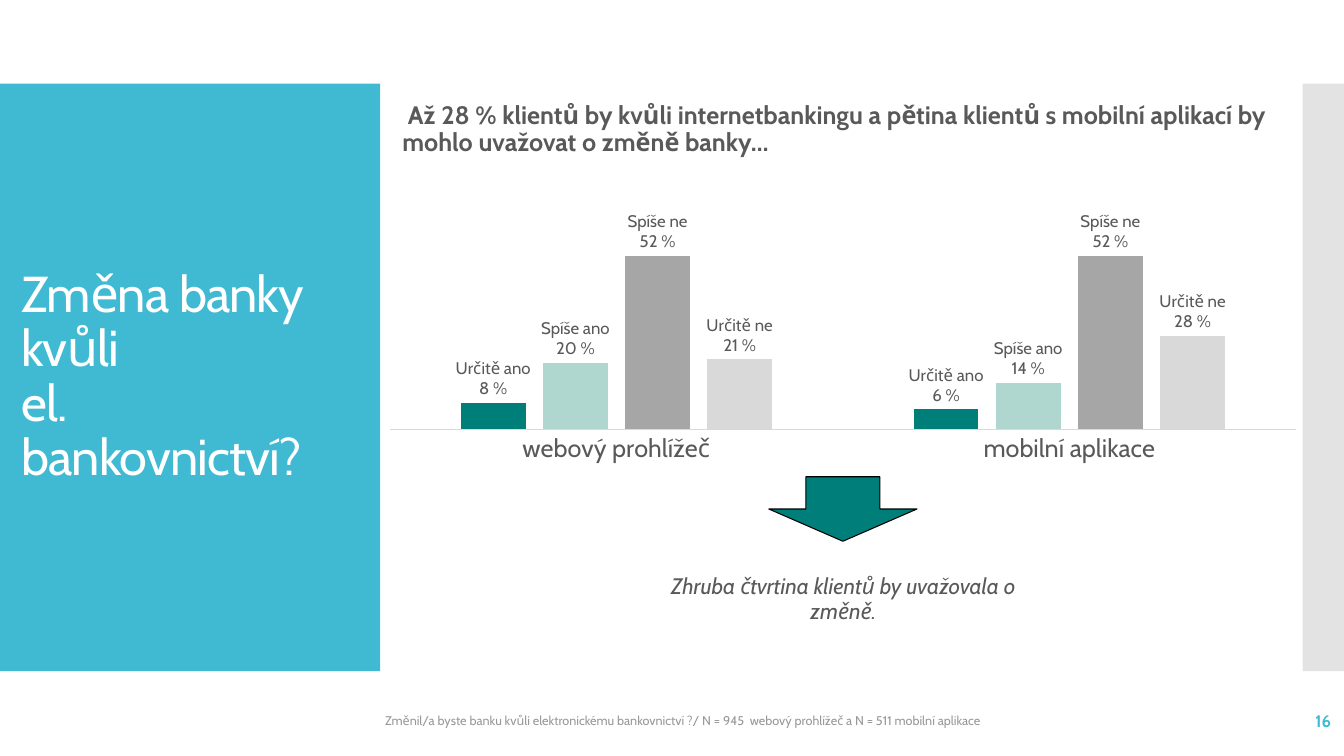
from dataclasses import dataclass

from lxml.etree import SubElement
from pptx import Presentation
from pptx.chart.data import CategoryChartData
from pptx.dml.color import RGBColor
from pptx.enum.chart import XL_CHART_TYPE, XL_LABEL_POSITION, XL_TICK_LABEL_POSITION, XL_TICK_MARK
from pptx.enum.shapes import MSO_SHAPE
from pptx.enum.text import MSO_ANCHOR, MSO_AUTO_SIZE, PP_ALIGN
from pptx.oxml import parse_xml
from pptx.oxml.ns import nsdecls, qn
from pptx.util import Inches, Pt


@dataclass(frozen=True)
class Theme:
    font: str = "Cabin"
    accent: str = "40BAD2"
    side: str = "C8C8C8"
    white: str = "FFFFFF"
    text: str = "595959"
    muted: str = "989898"
    teal: str = "007E79"
    mint: str = "AFD7CF"
    grey: str = "A6A6A6"
    light: str = "D9D9D9"
    outline: str = "000000"
    title_size: float = 36
    heading_size: float = 18
    note_size: float = 16
    label_size: float = 12
    footer_size: float = 9


T = Theme()
SHARE_FORMAT = "###0%"
ANSWERS = [
    ("Určitě ano", (0.08, 0.06), T.teal),
    ("Spíše ano", (0.20, 0.14), T.mint),
    ("Spíše ne", (0.52, 0.52), T.grey),
    ("Určitě ne", (0.21, 0.28), T.light),
]


def rgb(value):
    return RGBColor.from_string(value)


def inches(box):
    return [Inches(v) for v in box]


def set_font(font, size, color, bold=False, italic=False):
    font.name, font.size = T.font, Pt(size)
    font.bold, font.italic = bold, italic
    font.color.rgb = rgb(color)


def write(sp, box, text, size, color, align=PP_ALIGN.LEFT, anchor=MSO_ANCHOR.MIDDLE,
          spacing=1.0, bold=False, italic=False):
    sp.left, sp.top, sp.width, sp.height = inches(box)
    tf = sp.text_frame
    tf.text = text
    tf.word_wrap, tf.auto_size = True, MSO_AUTO_SIZE.NONE
    tf.vertical_anchor = anchor
    p = tf.paragraphs[0]
    p.alignment, p.line_spacing, p.space_before = align, spacing, Pt(0)
    set_font(p.font, size, color, bold, italic)
    return p


def add_filled(s, kind, box, color):
    sp = s.shapes.add_shape(kind, *inches(box))
    sp.shadow.inherit = False
    sp.fill.solid()
    sp.fill.fore_color.rgb = rgb(color)
    sp.line.fill.background()
    return sp


def add_panel(s, box, color, alpha=None):
    sp = add_filled(s, MSO_SHAPE.RECTANGLE, box, color)
    if alpha is not None:
        clr = sp._element.spPr.find(".//" + qn("a:srgbClr"))
        SubElement(clr, qn("a:alpha")).set("val", str(alpha * 1000))
    # Panels lie behind the placeholders
    s.shapes._spTree.insert(2, sp._element)


def add_title_panel(s, box):
    x, y, w, h = box
    add_panel(s, box, T.accent)
    p = write(s.shapes.title, (x + 0.11, y + 0.4, w - 0.26, h - 0.8),
              "Změna banky kvůli \vel. bankovnictví?", T.title_size, T.white, spacing=0.9)
    p.font._rPr.set("spc", "-60")


def add_bank_chart(s, box):
    data = CategoryChartData(number_format=SHARE_FORMAT)
    data.categories = ["webový prohlížeč", "mobilní aplikace"]
    for name, values, _ in ANSWERS:
        data.add_series(name, values)
    chart = s.shapes.add_chart(XL_CHART_TYPE.COLUMN_CLUSTERED, *inches(box), data).chart
    chart.has_legend = chart.has_title = False
    set_font(chart.font, T.label_size, T.text)

    # Axes
    shares, cats = chart.value_axis, chart.category_axis
    shares.minimum_scale, shares.maximum_scale = 0, 0.6
    shares.has_major_gridlines = shares.visible = False
    shares.tick_labels.number_format = SHARE_FORMAT
    shares.tick_labels.number_format_is_linked = False
    for axis in (shares, cats):
        axis.major_tick_mark = axis.minor_tick_mark = XL_TICK_MARK.NONE
        axis.tick_label_position = XL_TICK_LABEL_POSITION.NEXT_TO_AXIS
    cats.format.line.color.rgb = rgb(T.light)
    cats.format.line.width = Pt(0.75)
    cats.tick_labels.offset = 0
    set_font(cats.tick_labels.font, T.heading_size, T.text)

    # Columns with answer and share
    plot = chart.plots[0]
    plot.gap_width, plot.overlap, plot.vary_by_categories = 219, -27, False
    for series, (name, values, color) in zip(plot.series, ANSWERS):
        series.format.fill.solid()
        series.format.fill.fore_color.rgb = rgb(color)
        labels = series.data_labels
        labels.show_value = labels.show_series_name = True
        labels.number_format, labels.number_format_is_linked = SHARE_FORMAT, False
        labels.position = XL_LABEL_POSITION.OUTSIDE_END
        set_font(labels.font, T.label_size, T.text)
        for i, value in enumerate(values):
            label = series.points[i].data_label
            label.text_frame.text = f"{name}\n{value:.0%}".replace("%", " %")
            for p in label.text_frame.paragraphs:
                set_font(p.runs[0].font, T.label_size, T.text)
            label.position = XL_LABEL_POSITION.OUTSIDE_END

    # Inner plot area as shares of the chart
    area = chart._chartSpace.chart.plotArea
    for old in area.findall(qn("c:layout")):
        area.remove(old)
    places = "".join(f'<c:{k} val="{v}"/>' for k, v in
                     (("x", 0.016), ("y", 0.141), ("w", 0.967), ("h", 0.65)))
    area.insert(0, parse_xml(
        f'<c:layout {nsdecls("c")}><c:manualLayout><c:layoutTarget val="inner"/>'
        f'<c:xMode val="edge"/><c:yMode val="edge"/>{places}</c:manualLayout></c:layout>'))


def add_findings(s, box):
    x, y, w, h = box
    # Heading
    write(s.placeholders[1], (x + 0.17, y, 8.94, 0.76),
          " Až 28 % klientů by kvůli internetbankingu a pětina klientů s mobilní aplikací"
          " by mohlo uvažovat o změně banky…",
          T.heading_size, T.text, anchor=MSO_ANCHOR.BOTTOM, spacing=0.9, bold=True)
    # Conclusion under the arrow
    mid = x + w / 2
    write(s.placeholders[3], (mid - 2.06, y + h - 0.84, 4.12, 0.84),
          "Zhruba čtvrtina klientů by uvažovala o změně.",
          T.note_size, T.text, PP_ALIGN.CENTER, MSO_ANCHOR.BOTTOM, 0.9, italic=True)
    arrow = add_filled(s, MSO_SHAPE.DOWN_ARROW, (mid - 0.74, y + 3.88, 1.47, 0.64), T.teal)
    arrow.line.color.rgb = rgb(T.outline)
    arrow.line.width = Pt(0.75)
    add_bank_chart(s, (x, y + 0.99, w, 3.06))


def add_footer(s, box):
    x, y, w, h = box
    note = (x, y, 9.02, h)
    number = (x + w - 1.67, y, 1.67, h)
    write(add_filled(s, MSO_SHAPE.RECTANGLE, note, T.white), note,
          "Změnil/a byste banku kvůli elektronickému bankovnictví ?/ N = 945  webový prohlížeč"
          " a N = 511 mobilní aplikace", T.footer_size, T.muted)
    write(s.shapes.add_textbox(*inches(number)), number, "16",
          T.label_size, T.accent, PP_ALIGN.RIGHT, bold=True)


def main():
    prs = Presentation()
    prs.slide_width, prs.slide_height = Inches(13.33), Inches(7.5)
    s = prs.slides.add_slide(prs.slide_layouts[4])
    for idx in (2, 4):
        empty = s.placeholders[idx]._element
        empty.getparent().remove(empty)

    add_title_panel(s, (0, 0.83, 3.77, 5.83))
    add_panel(s, (12.92, 0.83, 0.41, 5.83), T.side, alpha=50)
    add_findings(s, (3.72, 0.85, 9.29, 5.39))
    add_footer(s, (3.72, 6.95, 9.58, 0.4))
    prs.save("out.pptx")


if __name__ == "__main__":
    main()
